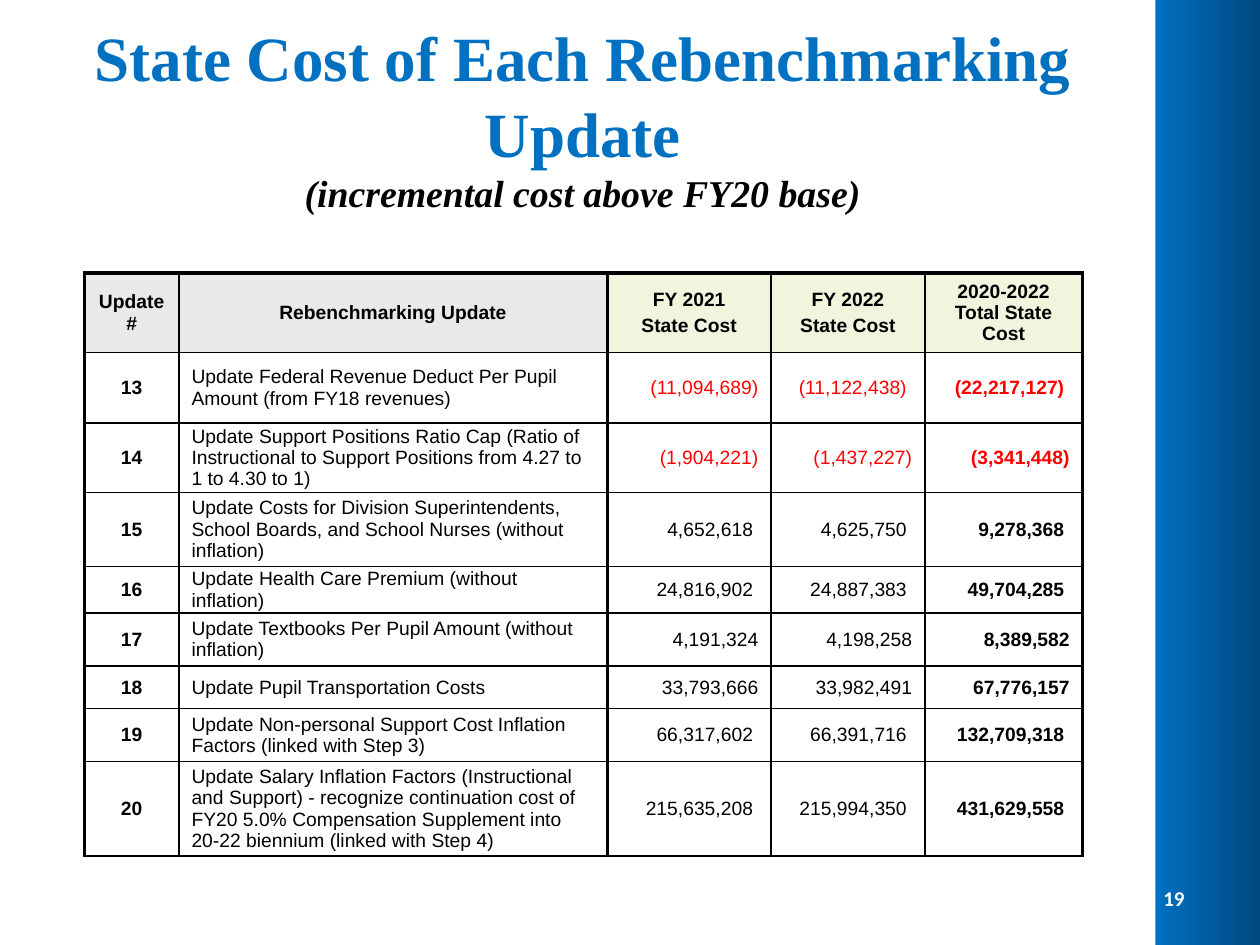
from dataclasses import dataclass

from lxml.etree import SubElement
from pptx import Presentation
from pptx.dml.color import RGBColor
from pptx.enum.shapes import MSO_SHAPE
from pptx.enum.text import MSO_ANCHOR, PP_ALIGN
from pptx.oxml.ns import qn
from pptx.util import Inches, Pt

WIDTH, HEIGHT = 10, 7.5
COLUMNS = (0.75, 3.4, 1.3, 1.22, 1.25)
ROWS = (0.61, 0.56, 0.51, 0.59, 0.34, 0.42, 0.34, 0.42, 0.75)
HEADINGS = ("Update #", "Rebenchmarking Update", "FY 2021\nState Cost",
            "FY 2022\nState Cost", "2020-2022 Total State Cost")
UPDATES = (
    ("13", "Update Federal Revenue Deduct Per Pupil Amount (from FY18 revenues)",
     "(11,094,689)", "(11,122,438) ", "(22,217,127) "),
    ("14", "Update Support Positions Ratio Cap (Ratio of Instructional to Support "
     "Positions from 4.27 to 1 to 4.30 to 1)",
     "(1,904,221)", "(1,437,227)", "(3,341,448)"),
    ("15", "Update Costs for Division Superintendents, School Boards, and School "
     "Nurses (without inflation)",
     "4,652,618 ", "4,625,750 ", "9,278,368 "),
    ("16", "Update Health Care Premium (without inflation)",
     "24,816,902 ", "24,887,383 ", "49,704,285 "),
    ("17", "Update Textbooks Per Pupil Amount (without inflation)",
     "4,191,324", "4,198,258", "8,389,582"),
    ("18", "Update Pupil Transportation Costs",
     "33,793,666", "33,982,491", "67,776,157"),
    ("19", "Update Non-personal Support Cost Inflation Factors (linked with Step 3)",
     "66,317,602 ", "66,391,716 ", "132,709,318 "),
    ("20", "Update Salary Inflation Factors (Instructional and Support) - recognize "
     "continuation cost of FY20 5.0% Compensation Supplement into 20-22 biennium "
     "(linked with Step 4)",
     "215,635,208 ", "215,994,350 ", "431,629,558 "),
)


@dataclass(frozen=True)
class Theme:
    blue: str = "0070C0"
    navy: str = "004A80"
    ink: str = "000000"
    white: str = "FFFFFF"
    deficit: str = "FF0000"
    label_fill: str = "E8EAE9"
    cost_fill: str = "F3F4DE"
    title_face: str = "Times New Roman"
    table_face: str = "Arial"
    number_face: str = "Calibri"
    title_size: float = 36
    subtitle_size: float = 21.6
    table_size: float = 11
    number_size: float = 12
    thin: float = 1
    thick: float = 2.25


THEME = Theme()


def place(left, top, width, height):
    return (Inches(WIDTH * left), Inches(HEIGHT * top),
            Inches(WIDTH * width), Inches(HEIGHT * height))


def style(font, face, size, color, bold=True):
    font.name, font.size, font.bold = face, Pt(size), bold
    font.color.rgb = RGBColor.from_string(color)


def add_side_band(slide):
    band = slide.shapes.add_shape(MSO_SHAPE.RECTANGLE, *place(0.917, 0, 0.083, 1))
    band.shadow.inherit = False
    band.line.fill.background()
    band.fill.gradient()
    band.fill.gradient_angle = 0
    for stop, color in zip(band.fill.gradient_stops, (THEME.blue, THEME.navy)):
        stop.color.rgb = RGBColor.from_string(color)


def add_text(slide, area, align):
    frame = slide.shapes.add_textbox(*place(*area)).text_frame
    frame.word_wrap = True
    frame.vertical_anchor = MSO_ANCHOR.MIDDLE
    frame.paragraphs[0].alignment = align
    return frame.paragraphs[0]


def add_title(slide):
    heading = add_text(slide, (0.05, 0.04, 0.825, 0.167), PP_ALIGN.CENTER)
    title = heading.add_run()
    title.text = "State Cost of Each Rebenchmarking Update"
    style(title.font, THEME.title_face, THEME.title_size, THEME.blue)
    heading.add_line_break()
    subtitle = heading.add_run()
    subtitle.text = "(incremental cost above FY20 base)"
    style(subtitle.font, THEME.title_face, THEME.subtitle_size, THEME.ink)
    subtitle.font.italic = True


def add_page_number(slide):
    number = add_text(slide, (0.908, 0.924, 0.042, 0.053), PP_ALIGN.RIGHT)
    number.text = "19"
    style(number.font, THEME.number_face, THEME.number_size, THEME.white)


def draw_borders(cell, row, column):
    heavy = {
        "a:lnL": column in (0, 2),
        "a:lnR": column in (1, len(COLUMNS) - 1),
        "a:lnT": row == 0,
        "a:lnB": False,
    }
    properties = cell._tc.get_or_add_tcPr()
    for side, is_heavy in heavy.items():
        weight = THEME.thick if is_heavy else THEME.thin
        line = SubElement(properties, qn(side), w=str(Pt(weight)))
        SubElement(SubElement(line, qn("a:solidFill")), qn("a:srgbClr"), val=THEME.ink)


def write_cell(cell, text, align, color=THEME.ink, bold=True):
    cell.vertical_anchor = MSO_ANCHOR.MIDDLE
    cell.text = text
    for index, paragraph in enumerate(cell.text_frame.paragraphs):
        paragraph.alignment = align
        if index:
            paragraph.space_before = Pt(0.2 * THEME.table_size)
        style(paragraph.font, THEME.table_face, THEME.table_size, color, bold)


def fill_heading(cell, column, text):
    cell.margin_top = cell.margin_bottom = Inches(0.04)
    write_cell(cell, text, PP_ALIGN.CENTER)
    cell.fill.solid()
    fill = THEME.label_fill if column < 2 else THEME.cost_fill
    cell.fill.fore_color.rgb = RGBColor.from_string(fill)


def fill_entry(cell, column, text):
    cell.margin_top = cell.margin_bottom = 0
    cell.margin_left = Inches(0.1 if column == 1 else 0)
    cell.margin_right = Inches(0.1 if column else 0)
    align = (PP_ALIGN.CENTER, PP_ALIGN.LEFT)[column] if column < 2 else PP_ALIGN.RIGHT
    is_deficit = column > 1 and text.startswith("(")
    write_cell(cell, text, align, THEME.deficit if is_deficit else THEME.ink,
               bold=column in (0, len(COLUMNS) - 1))
    cell.fill.background()


def add_cost_table(slide):
    area = place(0.067, 0.289, sum(COLUMNS) / WIDTH, sum(ROWS) / HEIGHT)
    costs = slide.shapes.add_table(len(ROWS), len(COLUMNS), *area).table
    costs.first_row = costs.horz_banding = False
    for column, width in zip(costs.columns, COLUMNS):
        column.width = Inches(width)
    for row, height in zip(costs.rows, ROWS):
        row.height = Inches(height)
    for row, entries in enumerate((HEADINGS, *UPDATES)):
        fill_cell = fill_entry if row else fill_heading
        for column, text in enumerate(entries):
            cell = costs.cell(row, column)
            draw_borders(cell, row, column)
            fill_cell(cell, column, text)


def main():
    deck = Presentation()
    deck.slide_width, deck.slide_height = Inches(WIDTH), Inches(HEIGHT)
    slide = deck.slides.add_slide(deck.slide_layouts[6])
    add_side_band(slide)
    add_page_number(slide)
    add_cost_table(slide)
    add_title(slide)
    deck.save("out.pptx")


if __name__ == "__main__":
    main()
